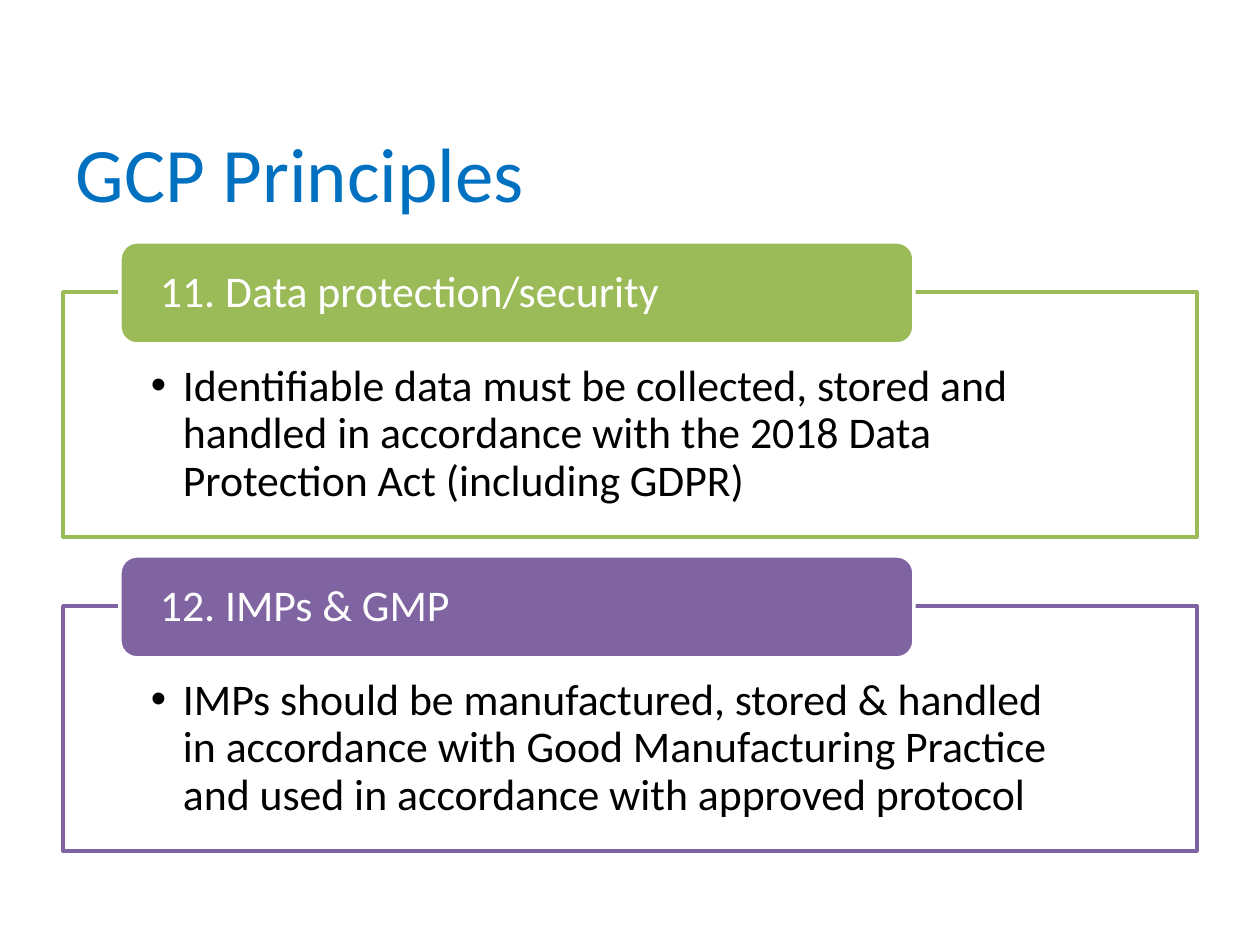
from lxml import etree
from pptx import Presentation
from pptx import util as u
from pptx.dml import color
from pptx.enum import shapes, text
from pptx.oxml import ns

SCALE = 914400 / 126
FONT = "Calibri"
LEFT, WIDTH = 63, 1134
FIRST_TOP, PITCH = 242, 314
PRINCIPLES = [
    ("11. Data protection/security",
     "Identifiable data must be collected, stored and handled in accordance "
     "with the 2018 Data Protection Act (including GDPR)", "9BBB59"),
    ("12. IMPs & GMP",
     "IMPs should be manufactured, stored & handled \tin accordance with Good "
     "Manufacturing Practice and used in accordance with approved protocol", "8064A2"),
]


def px(length):
    return u.Emu(round(length * SCALE))


def rgb(value):
    return color.RGBColor.from_string(value)


def add_text(box, wording, size, ink, margins, anchor):
    frame = box.text_frame
    frame.word_wrap = True
    frame.auto_size = text.MSO_AUTO_SIZE.NONE
    frame.vertical_anchor = anchor
    (frame.margin_left, frame.margin_top,
     frame.margin_right, frame.margin_bottom) = map(px, margins)
    para = frame.paragraphs[0]
    para.alignment = text.PP_ALIGN.LEFT
    span = para.add_run()
    span.text = wording
    span.font.name = FONT
    span.font.size = u.Pt(size)
    span.font.color.rgb = rgb(ink)
    return para


def add_panel(page, kind, place, fill, line):
    box = page.shapes.add_shape(kind, *map(px, place))
    box.shadow.inherit = False
    box.fill.solid()
    box.fill.fore_color.rgb = rgb(fill)
    box.line.color.rgb = rgb(line)
    box.line.width = u.Pt(2)
    return box


def set_opacity(box, percent):
    tint = box.fill._xPr.find(ns.qn("a:solidFill"))[0]
    etree.SubElement(tint, ns.qn("a:alpha"), val=str(percent * 1000))


def add_bullet(para, indent):
    props = para._p.get_or_add_pPr()
    props.set("marL", str(px(indent)))
    props.set("indent", str(-px(indent)))
    etree.SubElement(props, ns.qn("a:buFont"), typeface="Arial")
    etree.SubElement(props, ns.qn("a:buChar"), char="•")


def add_principle(page, top, heading, detail, accent):
    body = add_panel(page, shapes.MSO_SHAPE.RECTANGLE,
                     (LEFT, top + 50, WIDTH, 245), "FFFFFF", accent)
    set_opacity(body, 90)
    para = add_text(body, detail, 25, "000000", (88, 72, 88, 24),
                    text.MSO_ANCHOR.TOP)
    para.level = 1
    add_bullet(para, 32)
    para.line_spacing = 0.9

    header = add_panel(page, shapes.MSO_SHAPE.ROUNDED_RECTANGLE,
                       (LEFT + 57, top, 794, 102), accent, "FFFFFF")
    para = add_text(header, heading, 25, "FFFFFF", (35, 0, 35, 0),
                    text.MSO_ANCHOR.MIDDLE)
    para.line_spacing = 0.9


def add_title(page, wording):
    title = page.shapes.title
    title.left, title.top, title.width, title.height = map(px, (LEFT, 116, WIDTH, 158))
    add_text(title, wording, 44, "0070C0", (13, 10, 13, 6), text.MSO_ANCHOR.TOP)


def main():
    deck = Presentation()
    deck.slide_width, deck.slide_height = u.Inches(10), u.Inches(7.5)
    page = deck.slides.add_slide(deck.slide_layouts[5])
    add_title(page, "GCP Principles")
    for index, principle in enumerate(PRINCIPLES):
        add_principle(page, FIRST_TOP + index * PITCH, *principle)
    deck.save("out.pptx")


if __name__ == "__main__":
    main()
